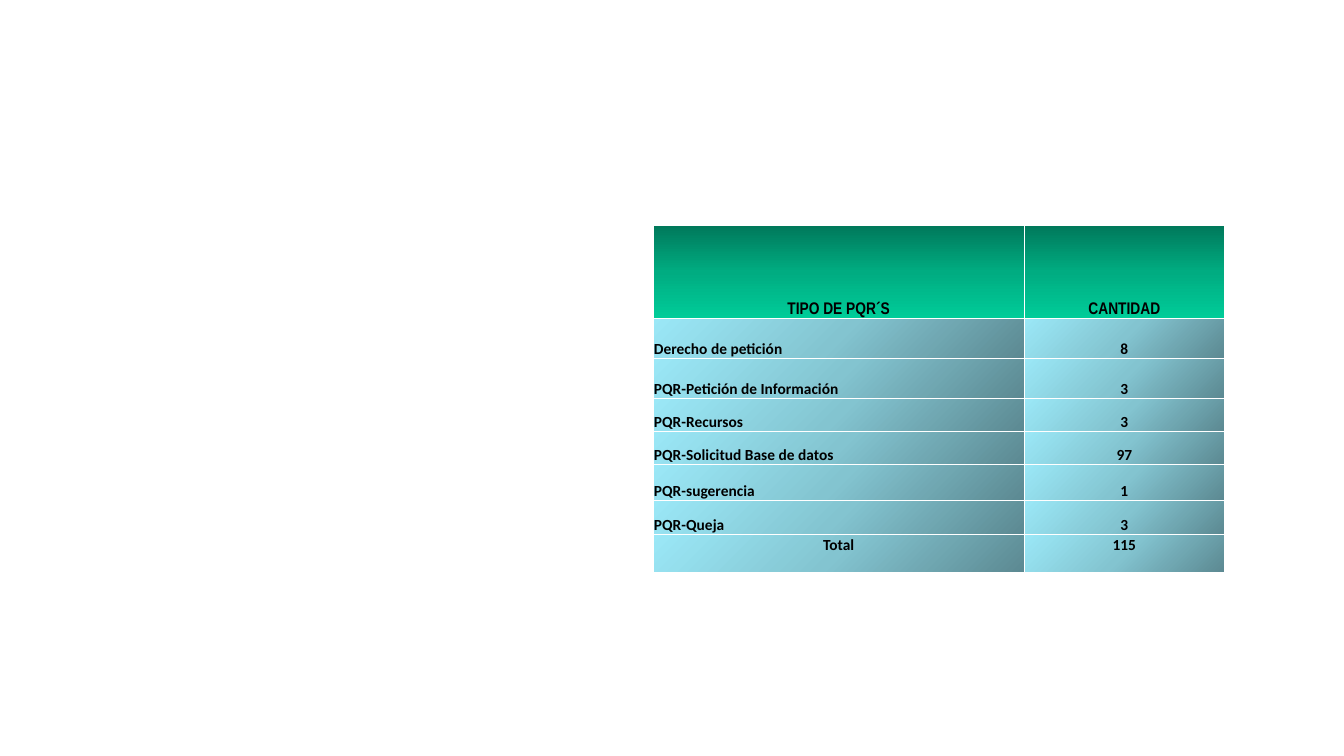
from lxml.etree import SubElement
from pptx import Presentation
from pptx.dml.color import RGBColor
from pptx.enum.text import MSO_ANCHOR, PP_ALIGN
from pptx.oxml.ns import qn
from pptx.util import Cm, Pt

COLORS = {
    "text": "000000", "line": "FFFFFF",
    "green": ("00795B", "00AC81", "00CC99"),
    "blue": ("5C8992", "83C4D0", "9BE8F7"),
}
HEAD = ("TIPO DE PQR´S", "CANTIDAD")
ITEMS = [
    ("Derecho de petición", 8),
    ("PQR-Petición de Información", 3),
    ("PQR-Recursos", 3),
    ("PQR-Solicitud Base de datos", 97),
    ("PQR-sugerencia", 1),
    ("PQR-Queja", 3),
]
WIDTHS = (9.35, 5.05)
HEIGHTS = (2.33, 1.01, 1.01, 0.83, 0.83, 0.91, 0.86, 0.95)


def add(node, tag, **attrs):
    return SubElement(node, qn("a:" + tag), attrs)


def write(cell, text, font="Calibri", size=11, align=PP_ALIGN.CENTER,
          anchor=MSO_ANCHOR.BOTTOM):
    cell.margin_left = cell.margin_right = cell.margin_top = Cm(0.02)
    cell.margin_bottom = 0
    cell.vertical_anchor = anchor
    par = cell.text_frame.paragraphs[0]
    par.alignment = align
    run = par.add_run()
    run.text = text
    run.font.name, run.font.size, run.font.bold = font, Pt(size), True
    run.font.color.rgb = RGBColor.from_string(COLORS["text"])


def border(cell):
    props = cell._tc.get_or_add_tcPr()
    for side in ("lnL", "lnR", "lnT", "lnB"):
        line = add(props, side, w=str(Pt(1)))
        add(add(line, "solidFill"), "srgbClr", val=COLORS["line"])


def shade(cell, name):
    grad = add(cell._tc.get_or_add_tcPr(), "gradFill", rotWithShape="1")
    stops = add(grad, "gsLst")
    for pos, color in zip((0, 50000, 100000), COLORS[name]):
        add(add(stops, "gs", pos=str(pos)), "srgbClr", val=color)
    if name == "green":
        add(grad, "lin", ang="5400000", scaled="0")
    else:
        # Radial blend centred on the bottom right corner
        ring = add(grad, "path", path="circle")
        add(ring, "fillToRect", l="100000", t="100000")


def add_row(table, row, texts, fill="blue", first=PP_ALIGN.CENTER, **form):
    for col, text in enumerate(texts):
        cell = table.cell(row, col)
        align = PP_ALIGN.CENTER if col else first
        write(cell, str(text), align=align, **form)
        border(cell)
        shade(cell, fill)


def add_grid(slide):
    frame = slide.shapes.add_table(
        len(HEIGHTS), len(WIDTHS), Cm(16.46), Cm(5.69),
        Cm(sum(WIDTHS)), Cm(sum(HEIGHTS)))
    table = frame.table
    table.first_row = table.horz_banding = False
    for col, width in zip(table.columns, WIDTHS):
        col.width = Cm(width)
    for row, height in zip(table.rows, HEIGHTS):
        row.height = Cm(height)
    return table


def main():
    deck = Presentation()
    deck.slide_width, deck.slide_height = Cm(33.87), Cm(19.05)
    slide = deck.slides.add_slide(deck.slide_layouts[6])

    # Header, one row per request type, then the total
    table = add_grid(slide)
    add_row(table, 0, HEAD, fill="green", font="Arial Narrow", size=12)
    for row, item in enumerate(ITEMS, 1):
        add_row(table, row, item, first=PP_ALIGN.LEFT)
    total = sum(count for _, count in ITEMS)
    add_row(table, len(ITEMS) + 1, ("Total", total), anchor=MSO_ANCHOR.TOP)

    deck.save("out.pptx")


if __name__ == "__main__":
    main()
